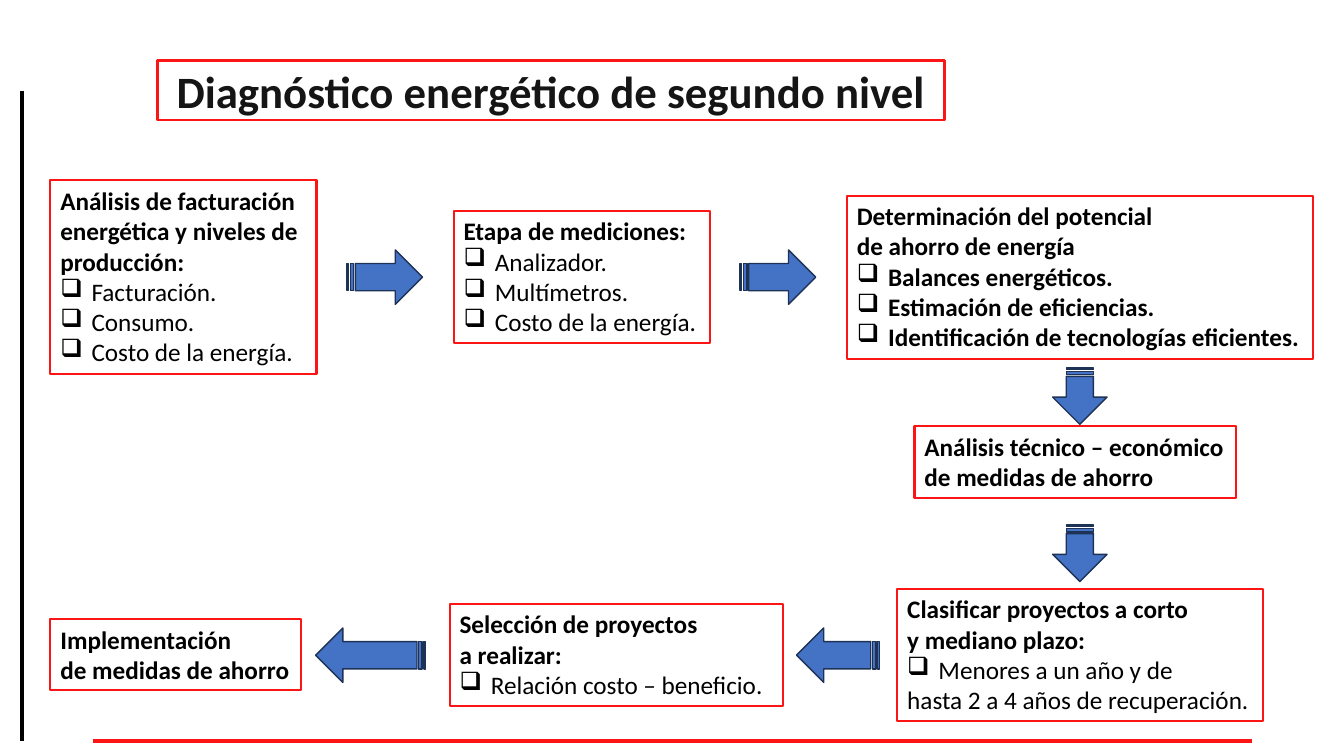
"""Builds the flow diagram of a second-level energy diagnosis."""
from dataclasses import dataclass

import lxml.etree
import pptx
import pptx.dml.color
import pptx.enum.shapes
import pptx.enum.text
import pptx.oxml.ns
import pptx.util

Inches = pptx.util.Inches
Pt = pptx.util.Pt
RED = "FC1515"
BLACK = "000000"


@dataclass(frozen=True)
class Stage:
    left: float
    top: float
    width: float
    height: float
    heading: tuple[str, ...]
    items: tuple[str, ...] = ()
    closing: tuple[str, ...] = ()
    bold_items: bool = False


@dataclass(frozen=True)
class Arrow:
    left: float
    top: float
    length: float
    rotation: int = 0


@dataclass(frozen=True)
class Rule:
    start: tuple[float, float]
    end: tuple[float, float]
    color: str


STAGES = (
    Stage(0.5, 1.79, 2.64, 1.92,
          ("Análisis de facturación", "energética y niveles de", "producción:"),
          ("Facturación.", "Consumo.", "Costo de la energía.")),
    Stage(4.5, 2.09, 2.54, 1.31, ("Etapa de mediciones:",),
          ("Analizador.", "Multímetros.", "Costo de la energía.")),
    Stage(8.4, 1.94, 4.62, 1.62,
          ("Determinación del potencial", "de ahorro de energía"),
          ("Balances energéticos.", "Estimación de eficiencias.",
           "Identificación de tecnologías eficientes."), bold_items=True),
    Stage(9.07, 4.23, 3.19, 0.71,
          ("Análisis técnico – económico", "de medidas de ahorro")),
    Stage(8.9, 5.84, 3.63, 1.31,
          ("Clasificar proyectos a corto", "y mediano plazo:"),
          ("Menores a un año y de",), ("hasta 2 a 4 años de recuperación.",)),
    Stage(4.46, 5.99, 3.31, 1.01, ("Selección de proyectos", "a realizar:"),
          ("Relación costo – beneficio.",)),
    Stage(0.5, 6.14, 2.49, 0.71, ("Implementación", "de medidas de ahorro")),
)
ARROWS = (
    Arrow(3.44, 2.48, 0.75),
    Arrow(7.34, 2.48, 0.75),
    Arrow(10.43, 3.66, 0.56, 90),
    Arrow(10.43, 5.22, 0.56, 90),
    Arrow(7.9, 6.23, 0.82, 180),
    Arrow(3.13, 6.23, 1.09, 180),
)
RULES = (
    Rule((0.92, 7.35), (12.42, 7.35), RED),
    Rule((0.22, 0.9), (0.22, 7.35), BLACK),
)


def rgb(color: str) -> pptx.dml.color.RGBColor:
    return pptx.dml.color.RGBColor.from_string(color)


def set_line(shape, color: str, width: float) -> None:
    shape.line.color.rgb = rgb(color)
    shape.line.width = Pt(width)


def set_font(paragraph, size: float, bold: bool, color: str) -> None:
    font = paragraph.font
    font.name = "Calibri"
    font.size = Pt(size)
    font.bold = bold
    font.color.rgb = rgb(color)


def add_bullet(paragraph) -> None:
    properties = paragraph._p.get_or_add_pPr()
    properties.set("marL", str(Inches(0.31)))
    properties.set("indent", str(Inches(-0.31)))
    bullet = lxml.etree.SubElement(properties, pptx.oxml.ns.qn("a:buChar"))
    bullet.set("char", "❑")


def draw_title(slide, text: str) -> None:
    title = slide.shapes.title
    title.left, title.top = Inches(1.56), Inches(0.6)
    title.width, title.height = Inches(7.81), Inches(0.59)
    set_line(title, RED, 2)
    frame = title.text_frame
    frame.text = text
    frame.word_wrap = True
    frame.auto_size = pptx.enum.text.MSO_AUTO_SIZE.NONE
    frame.vertical_anchor = pptx.enum.text.MSO_ANCHOR.MIDDLE
    frame.margin_left = frame.margin_right = Inches(0.03)
    frame.margin_top = frame.margin_bottom = Inches(0.03)
    frame.paragraphs[0].alignment = pptx.enum.text.PP_ALIGN.CENTER
    set_font(frame.paragraphs[0], 32, True, "151515")


def draw_stage(slide, stage: Stage) -> None:
    box = slide.shapes.add_textbox(Inches(stage.left), Inches(stage.top),
                                   Inches(stage.width), Inches(stage.height))
    set_line(box, RED, 1.5)
    frame = box.text_frame
    frame.word_wrap = False
    frame.auto_size = pptx.enum.text.MSO_AUTO_SIZE.SHAPE_TO_FIT_TEXT
    texts = stage.heading + stage.items + stage.closing
    first_item = len(stage.heading)
    first_closing = first_item + len(stage.items)
    for index, text in enumerate(texts):
        paragraph = frame.add_paragraph() if index else frame.paragraphs[0]
        paragraph.text = text
        if first_item <= index < first_closing:
            add_bullet(paragraph)
        set_font(paragraph, 18, index < first_item or stage.bold_items, BLACK)


def draw_arrow(slide, arrow: Arrow) -> None:
    shape = slide.shapes.add_shape(
        pptx.enum.shapes.MSO_SHAPE.STRIPED_RIGHT_ARROW,
        Inches(arrow.left), Inches(arrow.top), Inches(arrow.length), Inches(0.54))
    shape.rotation = arrow.rotation
    shape.shadow.inherit = False
    shape.fill.solid()
    shape.fill.fore_color.rgb = rgb("4472C4")
    set_line(shape, "1E3256", 1)


def draw_rule(slide, rule: Rule) -> None:
    line = slide.shapes.add_connector(
        pptx.enum.shapes.MSO_CONNECTOR.STRAIGHT,
        *map(Inches, rule.start + rule.end))
    set_line(line, rule.color, 3)
    lxml.etree.SubElement(line._element.spPr, pptx.oxml.ns.qn("a:effectLst"))


def main() -> None:
    presentation = pptx.Presentation()
    presentation.slide_width = Inches(13.33)
    presentation.slide_height = Inches(7.5)
    title_only = presentation.slide_layouts.get_by_name("Title Only")
    slide = presentation.slides.add_slide(title_only)
    for rule in RULES:
        draw_rule(slide, rule)
    draw_title(slide, "Diagnóstico energético de segundo nivel")
    for stage in STAGES:
        draw_stage(slide, stage)
    for arrow in ARROWS:
        draw_arrow(slide, arrow)
    presentation.save("out.pptx")


if __name__ == "__main__":
    main()
